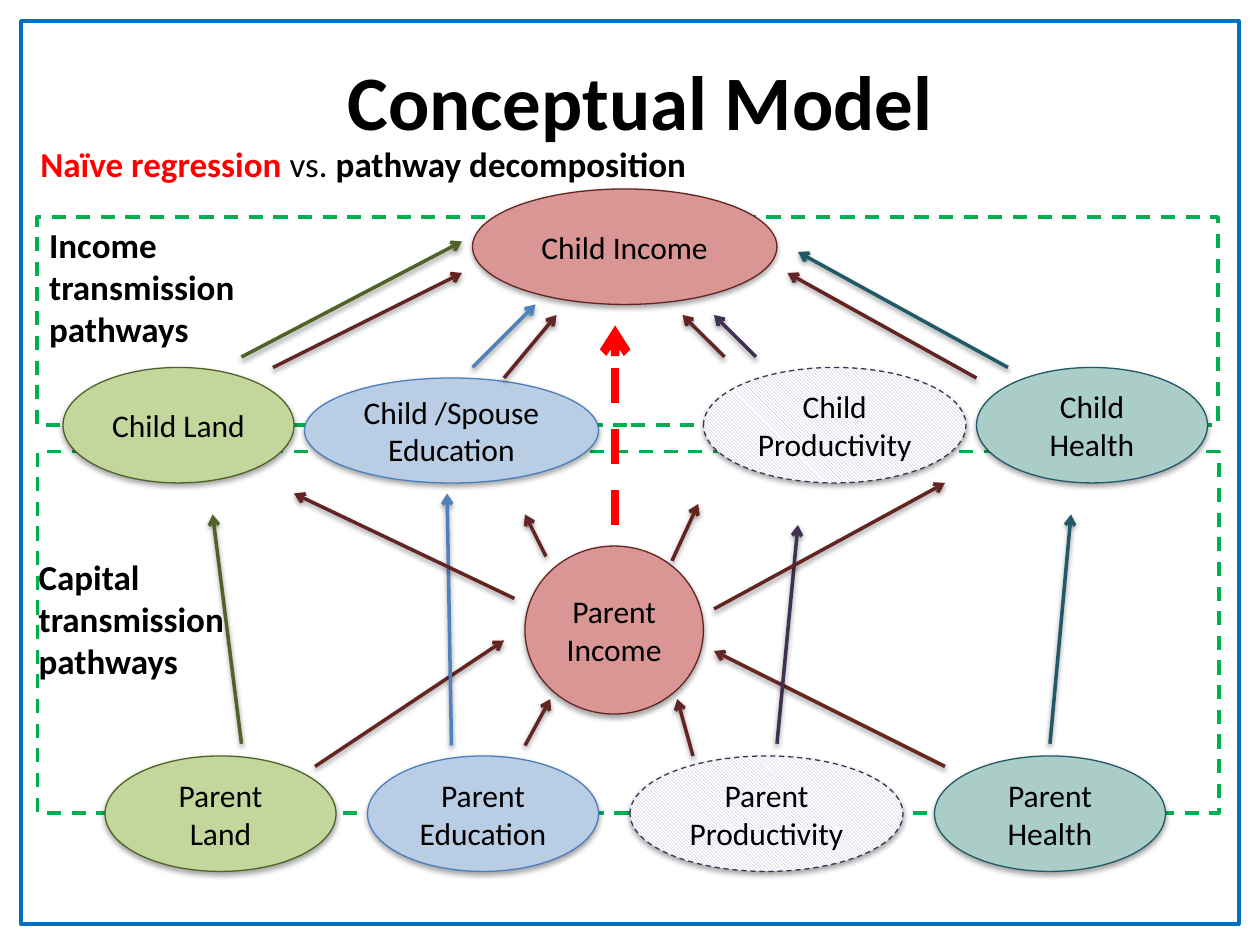
from pptx import Presentation
from pptx.dml.color import RGBColor
from pptx.enum.dml import MSO_LINE, MSO_PATTERN
from pptx.enum.shapes import MSO_CONNECTOR, MSO_SHAPE
from pptx.enum.text import MSO_ANCHOR, PP_ALIGN
from pptx.oxml import parse_xml
from pptx.oxml.ns import nsdecls
from pptx.util import Pt

DASH = MSO_LINE.DASH
HATCH = MSO_PATTERN.LIGHT_DOWNWARD_DIAGONAL
RECTANGLE, ELLIPSE = MSO_SHAPE.RECTANGLE, MSO_SHAPE.OVAL
STRAIGHT = MSO_CONNECTOR.STRAIGHT
CENTER, LEFT = PP_ALIGN.CENTER, PP_ALIGN.LEFT
MIDDLE, TOP = MSO_ANCHOR.MIDDLE, MSO_ANCHOR.TOP
FONT = "Calibri"

COLORS = {
    "text": "000000", "white": "FFFFFF", "frame": "0070C0", "panel": "00B050", "naive": "FF0000",
    "land": "C3D69B", "land line": "4F6228",
    "education": "B9CDE5", "education line": "4B7EBC", "education arrow": "4F81BD",
    "productivity": "B3A2C7", "productivity line": "403152",
    "health": "AACDC8", "health line": "215968",
    "income": "D99694", "income line": "632523",
}

# Nodes: text, kind, left, top, width, height, relative to their region.
CAPITAL_NODES = [
    ("Parent Land", "land", 42, 174, 132, 66),
    ("Parent Education", "education", 192, 174, 132, 66),
    ("Parent Productivity", "productivity", 342, 174, 156, 66),
    ("Parent Health", "health", 516, 174, 132, 66),
    ("Parent Income", "income", 282, 54, 102, 96),
]
INCOME_NODES = [
    ("Child Land", "land", 18, 102, 132, 66),
    ("Child /Spouse Education", "education", 156, 108, 168, 60),
    ("Child Productivity", "productivity", 384, 102, 150, 66),
    ("Child Health", "health", 540, 102, 132, 66),
    ("Child Income", "income", 252, 0, 174, 66),
]
# Arrows: color, start x, start y, end x, end y, relative to their region.
CAPITAL_ARROWS = [
    ("income line", 162, 180, 270, 108),
    ("income line", 282, 168, 296.5, 141.5),
    ("income line", 378, 174, 369, 141.5),
    ("income line", 522, 180, 390, 114),
    ("education arrow", 240, 168, 237.5, 24),
    ("income line", 276, 84, 150, 24),
    ("income line", 366, 62.5, 381, 30),
    ("land line", 120, 167, 103.5, 36),
    ("productivity line", 426, 167, 438, 42),
    ("health line", 582, 167, 594, 36),
    ("income line", 294, 60, 282, 36),
    ("income line", 390, 90, 522, 18),
]
INCOME_ARROWS = [
    ("land line", 120, 96, 246, 30),
    ("education arrow", 252, 102, 288, 66),
    ("productivity line", 414, 96, 390, 72),
    ("health line", 558, 102, 438, 36),
    ("income line", 138, 102, 246, 48),
    ("income line", 270, 108, 300, 72),
    ("income line", 396, 96, 372, 72),
    ("income line", 540, 108, 432, 48),
]


def rgb(name):
    return RGBColor.from_string(COLORS[name])


def soft_shadow(opacity):
    return parse_xml(
        f'<a:outerShdw {nsdecls("a")} blurRad="{Pt(3.1)}" dist="{Pt(1.7)}" dir="5400000"'
        f' rotWithShape="0"><a:srgbClr val="000000"><a:alpha val="{opacity * 1000}"/>'
        '</a:srgbClr></a:outerShdw>')


def set_line(line, color, weight, dashed=False):
    line.color.rgb = rgb(color)
    line.width = Pt(weight)
    if dashed:
        line.dash_style = DASH


def add_outline(slide, box, color, dashed=False):
    """Draw an unfilled rectangle."""
    outline = slide.shapes.add_shape(RECTANGLE, *map(Pt, box))
    outline.shadow.inherit = False
    outline.fill.background()
    set_line(outline.line, color, 2, dashed)


def add_text(slide, box, spans, size, align=LEFT, anchor=TOP):
    """Add a one-paragraph text box; each span is (text, color, bold)."""
    frame = slide.shapes.add_textbox(*map(Pt, box)).text_frame
    frame.word_wrap = True
    frame.vertical_anchor = anchor
    para = frame.paragraphs[0]
    para.alignment = align
    para.font.name, para.font.size = FONT, Pt(size)
    for text, color, bold in spans:
        span = para.add_run()
        span.text = text
        span.font.bold = bold
        span.font.color.rgb = rgb(color)


def add_node(slide, box, text, kind):
    node = slide.shapes.add_shape(ELLIPSE, *map(Pt, box))
    hatched = kind == "productivity"
    if hatched:
        node.fill.patterned()
        node.fill.pattern = HATCH
        node.fill.fore_color.rgb = rgb(kind)
        node.fill.back_color.rgb = rgb("white")
    else:
        node.fill.solid()
        node.fill.fore_color.rgb = rgb(kind)
    set_line(node.line, f"{kind} line", 0.75, hatched)
    node.shadow.inherit = False
    node._element.spPr.find("{*}effectLst").append(soft_shadow(35))

    frame = node.text_frame
    frame.word_wrap = True
    frame.vertical_anchor = MIDDLE
    para = frame.paragraphs[0]
    para.text = text
    para.alignment = CENTER
    para.font.name, para.font.size = FONT, Pt(18)
    para.font.color.rgb = rgb("text")


def add_arrow(slide, ends, color, weight=2, dashed=False, shadowed=True):
    arrow = slide.shapes.add_connector(STRAIGHT, *map(Pt, ends))
    set_line(arrow.line, color, weight, dashed)
    arrow.line._get_or_add_ln().append(parse_xml(f'<a:tailEnd {nsdecls("a")} type="arrow"/>'))
    effects = parse_xml(f'<a:effectLst {nsdecls("a")}/>')
    if shadowed:
        effects.append(soft_shadow(38))
    arrow._element.spPr.append(effects)


def add_pathways(slide, left, top, panel, label, label_box, nodes, arrows):
    """Draw one dashed region with its nodes, arrows and label."""
    def placed(box):
        x, y, width, height = box
        return left + x, top + y, width, height

    add_outline(slide, placed(panel), "panel", dashed=True)
    for text, kind, *box in nodes:
        add_node(slide, placed(box), text, kind)
    for color, x1, y1, x2, y2 in arrows:
        add_arrow(slide, (left + x1, top + y1, left + x2, top + y2), color)
    add_text(slide, placed(label_box), [(label, "text", True)], 20)


def add_heading(slide, left, top):
    add_text(slide, (left + 30, top, 648, 90), [("Conceptual Model", "text", True)],
             44, CENTER, MIDDLE)
    add_text(slide, (left + 4, top + 66, 672, 31.5),
             [("Naïve regression ", "naive", True), ("vs. ", "text", False),
              ("pathway decomposition", "text", True)], 20)


def main():
    deck = Presentation()
    deck.slide_width, deck.slide_height = Pt(720), Pt(540)
    slide = deck.slides.add_slide(deck.slide_layouts[6])
    add_pathways(slide, 18, 258, (3.5, 0, 675, 206.5), "Capital transmission pathways",
                 (-3, 56, 134.5, 80), CAPITAL_NODES, CAPITAL_ARROWS)
    add_pathways(slide, 18, 108, (3, 16, 675, 119), "Income transmission pathways",
                 (3, 16, 134.5, 80), INCOME_NODES, INCOME_ARROWS)
    add_outline(slide, (12, 12, 696, 516), "frame")
    add_heading(slide, 12, 12)
    add_arrow(slide, (351.5, 300, 351.5, 186), "naive", 5, dashed=True, shadowed=False)
    deck.save("out.pptx")


if __name__ == "__main__":
    main()
